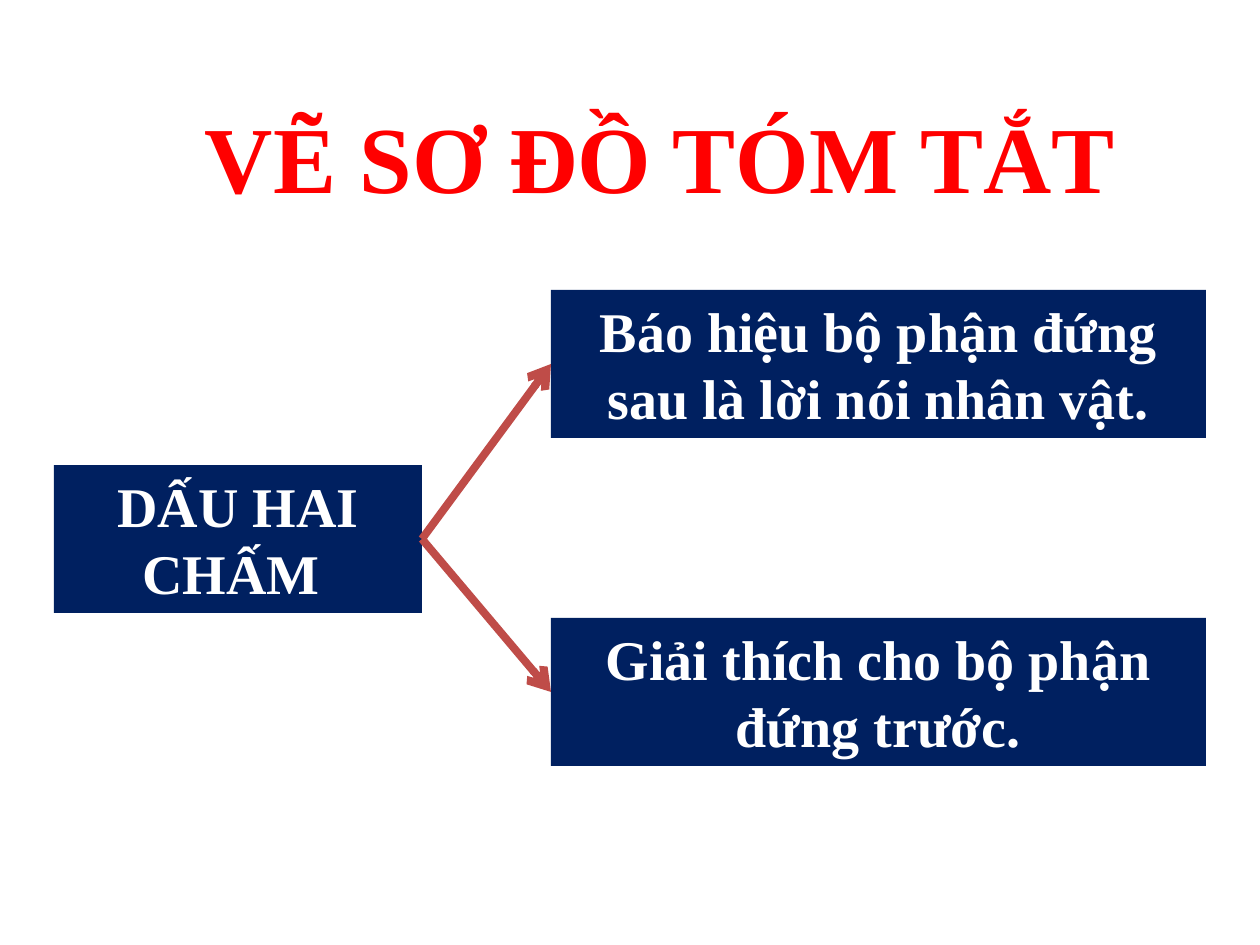
from dataclasses import dataclass

from lxml.etree import SubElement
from pptx import Presentation
from pptx.dml.color import RGBColor
from pptx.enum.shapes import MSO_CONNECTOR, MSO_SHAPE
from pptx.enum.text import MSO_ANCHOR, PP_ALIGN
from pptx.oxml.ns import qn
from pptx.slide import Slide
from pptx.text.text import TextFrame
from pptx.util import Emu, Pt

PX_PER_INCH = 126


@dataclass(frozen=True)
class Theme:
    font: str = "Times New Roman"
    title: RGBColor = RGBColor(0xFF, 0x00, 0x00)
    box: RGBColor = RGBColor(0x00, 0x20, 0x60)
    box_text: RGBColor = RGBColor(0xFF, 0xFF, 0xFF)
    arrow: RGBColor = RGBColor(0xBF, 0x4C, 0x48)
    title_size: Pt = Pt(54)
    box_size: Pt = Pt(32)
    arrow_width: Pt = Pt(4.5)


@dataclass(frozen=True)
class Box:
    text: str
    left: int
    top: int
    width: int
    height: int

    @property
    def middle(self) -> int:
        return self.top + self.height // 2

    def frame(self) -> tuple[Emu, ...]:
        return tuple(map(px, (self.left, self.top, self.width, self.height)))


THEME = Theme()
TITLE = Box("VẼ SƠ ĐỒ TÓM TẮT", 93, 77, 1134, 158)
TOPIC = Box("DẤU HAI CHẤM ", 54, 465, 368, 148)
USES = [
    Box(text, 551, 290 + i * 328, 655, 148)
    for i, text in enumerate((
        "Báo hiệu bộ phận đứng sau là lời nói nhân vật.",
        "Giải thích cho bộ phận đứng trước.",
    ))
]


def px(n: int) -> Emu:
    return Emu(round(n * 914400 / PX_PER_INCH))


def write(tf: TextFrame, text: str, size: Pt, color: RGBColor, anchor: MSO_ANCHOR) -> None:
    tf.word_wrap = True
    tf.vertical_anchor = anchor
    p = tf.paragraphs[0]
    p.text = text
    p.alignment = PP_ALIGN.CENTER
    p.font.name = THEME.font
    p.font.size = size
    p.font.bold = True
    p.font.color.rgb = color


def draw_title(s: Slide, title: Box) -> None:
    sp = s.shapes.add_textbox(*title.frame())
    write(sp.text_frame, title.text, THEME.title_size, THEME.title, MSO_ANCHOR.MIDDLE)


def draw_box(s: Slide, box: Box) -> None:
    sp = s.shapes.add_shape(MSO_SHAPE.RECTANGLE, *box.frame())
    sp.shadow.inherit = False
    sp.fill.solid()
    sp.fill.fore_color.rgb = THEME.box
    sp.line.fill.background()
    write(sp.text_frame, box.text, THEME.box_size, THEME.box_text, MSO_ANCHOR.TOP)


def draw_arrow(s: Slide, start: Box, end: Box) -> None:
    points = (start.left + start.width, start.middle, end.left, end.middle)
    cxn = s.shapes.add_connector(MSO_CONNECTOR.STRAIGHT, *map(px, points))
    cxn.line.color.rgb = THEME.arrow
    cxn.line.width = THEME.arrow_width
    SubElement(cxn.line._get_or_add_ln(), qn("a:tailEnd"), type="arrow")
    SubElement(cxn._element.spPr, qn("a:effectLst"))


def main() -> None:
    prs = Presentation()
    prs.slide_width, prs.slide_height = px(1260), px(945)
    s = prs.slides.add_slide(prs.slide_layouts[6])
    draw_title(s, TITLE)
    for box in (TOPIC, *USES):
        draw_box(s, box)
    for use in USES:
        draw_arrow(s, TOPIC, use)
    prs.save("out.pptx")


if __name__ == "__main__":
    main()
